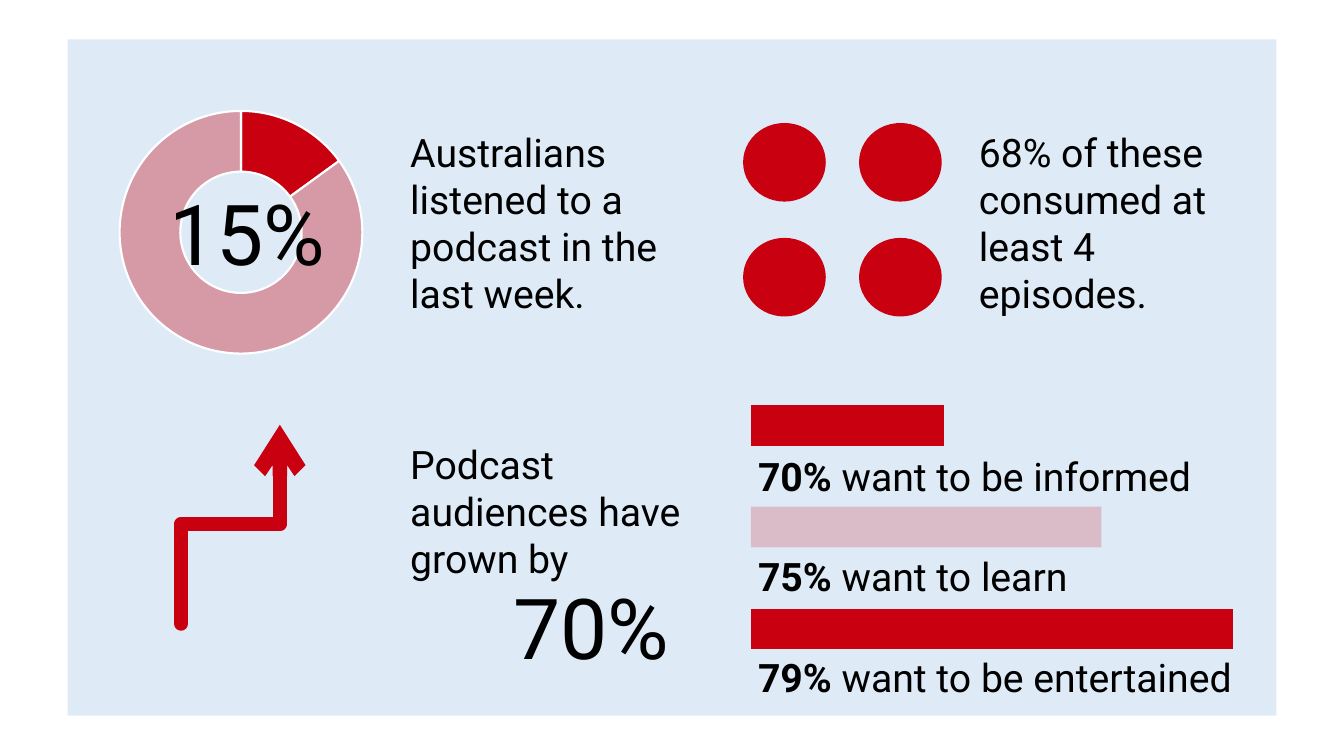
from lxml import etree
from pptx import Presentation
from pptx.chart.data import CategoryChartData
from pptx.dml.color import RGBColor
from pptx.enum.chart import XL_CHART_TYPE
from pptx.enum.shapes import MSO_CONNECTOR, MSO_SHAPE
from pptx.enum.text import MSO_AUTO_SIZE
from pptx.oxml import parse_xml
from pptx.oxml.ns import nsdecls, qn
from pptx.util import Inches, Pt

RED = RGBColor(0xC8, 0x00, 0x0F)
PALE_BLUE = RGBColor(0xDE, 0xEB, 0xF7)
WHITE = RGBColor(0xFF, 0xFF, 0xFF)
BLACK = RGBColor(0x00, 0x00, 0x00)
DOUGHNUT, BARS = XL_CHART_TYPE.DOUGHNUT, XL_CHART_TYPE.BAR_CLUSTERED
RECTANGLE, OVAL = MSO_SHAPE.RECTANGLE, MSO_SHAPE.OVAL
ELBOW = MSO_CONNECTOR.ELBOW
FIT_SHAPE = MSO_AUTO_SIZE.SHAPE_TO_FIT_TEXT


class PodcastPage:
    """Draws the elements of the podcast infographic in one style."""

    def __init__(self, page):
        self.page = page
        self.font = "Roboto"
        self.chart_font = "Calibri"

    def shape(self, kind, color, left, top, width, height):
        shape = self.page.shapes.add_shape(
            kind, Inches(left), Inches(top), Inches(width), Inches(height))
        shape.shadow.inherit = False
        shape.fill.solid()
        shape.fill.fore_color.rgb = color
        shape.line.fill.background()

    def text(self, words, left, top, width, height, size=28, lead=""):
        box = self.page.shapes.add_textbox(
            Inches(left), Inches(top), Inches(width), Inches(height))
        frame = box.text_frame
        frame.word_wrap = True
        frame.auto_size = FIT_SHAPE
        para = frame.paragraphs[0]
        para.font.name = self.font
        para.font.size = Pt(size)
        para.font.color.rgb = BLACK
        if lead:
            span = para.add_run()
            span.text = lead
            span.font.bold = True
        para.add_run().text = words

    def chart(self, kind, values, area, layout, opacities):
        data = CategoryChartData()
        data.categories = [str(number + 1) for number in range(len(values))]
        data.add_series("Series 1", values)
        chart = self.page.shapes.add_chart(
            kind, *[Inches(length) for length in area], data).chart
        chart.has_legend = False
        chart.has_title = False
        chart.font.name = self.chart_font
        chart.font.size = Pt(10)
        chart.font.color.rgb = BLACK
        plot = chart.plots[0]
        plot.has_data_labels = False
        for index, opacity in enumerate(opacities):
            style = plot.series[0].points[index].format
            style.fill.solid()
            style.fill.fore_color.rgb = RED
            if opacity < 100:
                color = style.fill._xPr.find(".//" + qn("a:srgbClr"))
                etree.SubElement(color, qn("a:alpha")).set("val", str(opacity * 1000))
            if kind == DOUGHNUT:
                style.line.color.rgb = WHITE
                style.line.width = Pt(1.5)
            else:
                style.line.fill.background()
        self.place_plot(chart, layout)
        return chart

    def place_plot(self, chart, layout):
        area = chart._chartSpace.chart.plotArea
        for old in area.findall(qn("c:layout")):
            area.remove(old)
        tags = "".join(f'<c:{name} val="{value}"/>' for name, value in zip("xywh", layout))
        area.insert(0, parse_xml(
            f'<c:layout {nsdecls("c")}><c:manualLayout><c:layoutTarget val="inner"/>'
            f'<c:xMode val="edge"/><c:yMode val="edge"/>{tags}</c:manualLayout></c:layout>'))

    def doughnut(self, values, area, layout, opacities, hole):
        chart = self.chart(DOUGHNUT, values, area, layout, opacities)
        plot = chart.plots[0]
        plot.vary_by_categories = True
        plot._element.find(qn("c:holeSize")).set("val", str(hole))

    def bars(self, values, area, layout, opacities, low, high):
        chart = self.chart(BARS, values, area, layout, opacities)
        plot = chart.plots[0]
        plot.vary_by_categories = False
        plot.gap_width = 150
        plot.overlap = -25
        axis = chart.value_axis
        axis.minimum_scale, axis.maximum_scale = low, high
        axis.has_major_gridlines = False
        axis.visible = chart.category_axis.visible = False

    def rising_arrow(self, left, top, width, height):
        arrow = self.page.shapes.add_connector(
            ELBOW, Inches(left + width), Inches(top + height), Inches(left), Inches(top))
        arrow.line.color.rgb = RED
        arrow.line.width = Pt(10.5)
        properties = arrow._element.spPr
        properties.find(qn("a:xfrm")).set("rot", str(90 * 60000))
        line = properties.find(qn("a:ln"))
        line.set("cap", "rnd")
        etree.SubElement(line, qn("a:round"))
        etree.SubElement(line, qn("a:tailEnd")).set("type", "arrow")
        etree.SubElement(properties, qn("a:effectLst"))


def main():
    deck = Presentation()
    deck.slide_width, deck.slide_height = Inches(13.33), Inches(7.5)
    page = PodcastPage(deck.slides.add_slide(deck.slide_layouts[6]))

    page.shape(RECTANGLE, PALE_BLUE, 0.67, 0.39, 11.99, 6.71)
    page.doughnut((15, 85, None, None), (0.67, 0.96, 3.44, 2.69),
                  (0.15, 0.05, 0.7, 0.9), (100, 34), 75)
    page.text("15%", 1.58, 1.75, 1.96, 1.11, size=60)
    page.text("Australians listened to a podcast in the last week.", 3.97, 1.22, 2.98, 1.99)

    for left in (7.37, 8.52):
        for top in (1.22, 2.36):
            page.shape(OVAL, RED, left, top, 0.82, 0.78)
    page.text("68% of these consumed at least 4 episodes.", 9.61, 1.22, 2.98, 1.99)

    page.rising_arrow(1.3, 4.71, 1.97, 0.98)
    page.text("Podcast audiences have grown by", 3.97, 4.32, 2.98, 1.51)
    page.text("70%", 4.99, 5.66, 1.96, 1.11, size=60)

    page.bars((100, 95, 89), (7.34, 3.65, 5.32, 3.16),
              (0.02, 0.02, 0.96, 0.96), (100, 20, 100), 81.65, 101.25)
    reasons = (("70% ", "want to be informed"), ("75% ", "want to learn"),
               ("79% ", "want to be entertained"))
    for row, (share, reason) in enumerate(reasons):
        page.text(reason, 7.42, 4.44 + row * 0.995, 5.37, 0.57, lead=share)

    deck.save("out.pptx")


if __name__ == "__main__":
    main()
